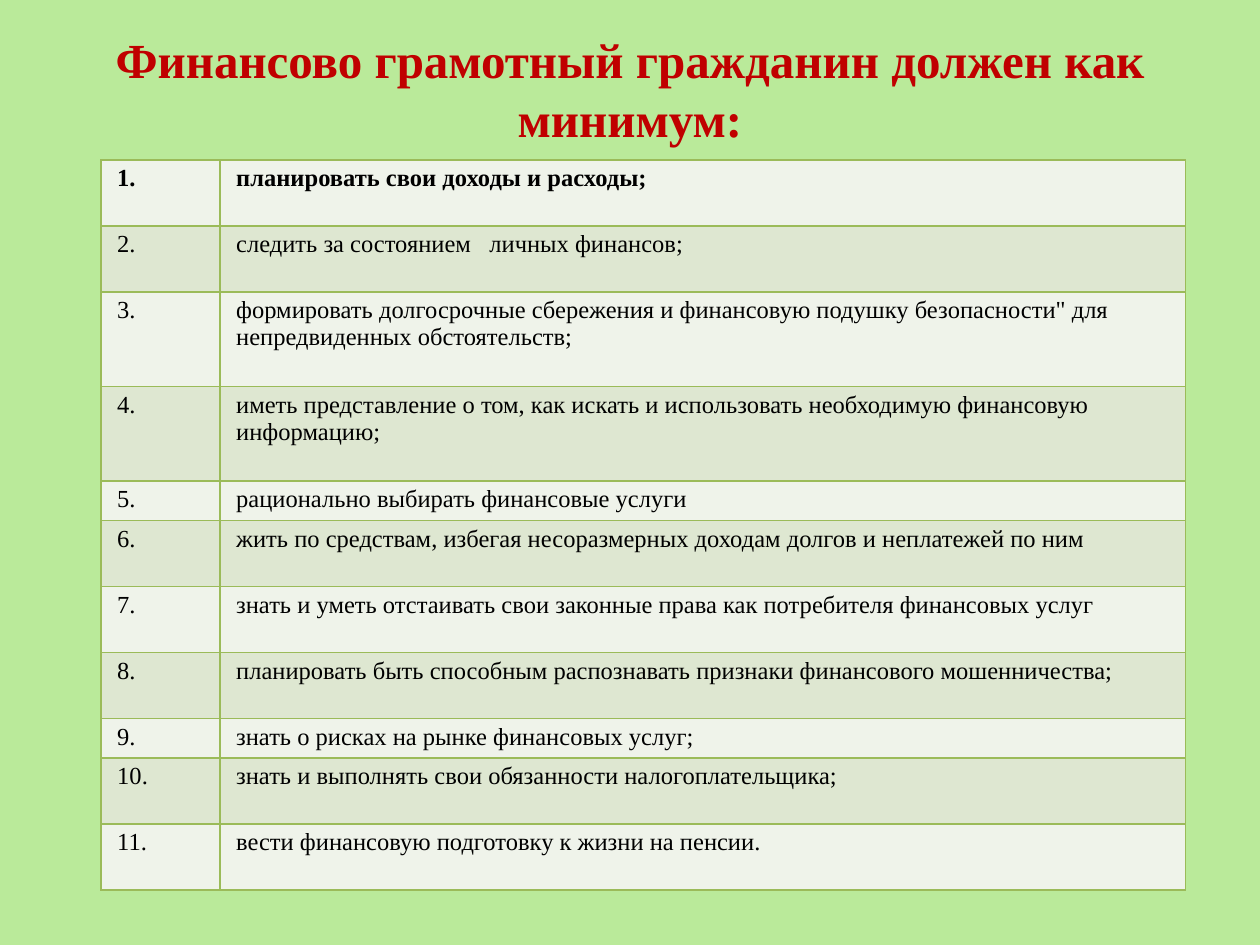
from dataclasses import dataclass

from lxml.etree import SubElement
from pptx import Presentation
from pptx.dml.color import RGBColor as Color
from pptx.enum.text import MSO_ANCHOR as Anchor, PP_ALIGN as Align
from pptx.oxml.ns import qn
from pptx.util import Pt


@dataclass(frozen=True)
class Theme:
    font: str = "Times New Roman"
    background: str = "BAEA9A"
    title: str = "C00000"
    text: str = "000000"
    border: str = "9BBB59"
    bands: tuple = ("EFF3EA", "DEE7D1")
    title_size: int = 28
    body_size: int = 14


THEME = Theme()
TITLE = "Финансово грамотный гражданин должен как минимум:"
SHORT, MEDIUM, TALL = 21.9, 37.75, 54
COLUMNS = (68, 552)
SKILLS = (
    ("планировать свои доходы и расходы;", MEDIUM),
    ("следить за состоянием   личных финансов;", MEDIUM),
    ('формировать долгосрочные сбережения и финансовую подушку безопасности" для непредвиденных обстоятельств;', TALL),
    ("иметь представление о том, как искать и использовать необходимую финансовую информацию;", TALL),
    ("рационально выбирать финансовые услуги", SHORT),
    ("жить по средствам, избегая несоразмерных доходам долгов и неплатежей по ним", MEDIUM),
    ("знать и уметь отстаивать свои законные права как потребителя финансовых услуг", MEDIUM),
    ("планировать быть способным распознавать признаки финансового мошенничества;", MEDIUM),
    ("знать о рисках на рынке финансовых услуг;", SHORT),
    ("знать и выполнять свои обязанности налогоплательщика;", MEDIUM),
    ("вести финансовую подготовку к жизни на пенсии.", MEDIUM),
)


def add_span(para, text, size, color, bold):
    span = para.add_run()
    span.text = text
    span.font.name = THEME.font
    span.font.size = Pt(size)
    span.font.bold = bold
    span.font.color.rgb = Color.from_string(color)


def add_title(page):
    box = page.shapes.add_textbox(Pt(36), Pt(21.6), Pt(648), Pt(90))
    frame = box.text_frame
    frame.word_wrap = True
    frame.vertical_anchor = Anchor.MIDDLE
    frame.margin_bottom = Pt(36)
    para = frame.paragraphs[0]
    para.alignment = Align.CENTER
    add_span(para, TITLE, THEME.title_size, THEME.title, True)


def add_borders(cell):
    properties = cell._tc.get_or_add_tcPr()
    for side in ("lnL", "lnR", "lnT", "lnB"):
        line = SubElement(properties, qn(f"a:{side}"), w=str(Pt(1)))
        fill = SubElement(line, qn("a:solidFill"))
        SubElement(fill, qn("a:srgbClr"), val=THEME.border)


def fill_cell(cell, text, band, bold):
    add_borders(cell)
    cell.fill.solid()
    cell.fill.fore_color.rgb = Color.from_string(band)
    cell.margin_left = cell.margin_right = Pt(9.4)
    cell.margin_top = cell.margin_bottom = Pt(2.88)
    add_span(cell.text_frame.paragraphs[0], text, THEME.body_size, THEME.text, bold)


def add_skills(page):
    height = sum(row_height for _, row_height in SKILLS)
    frame = page.shapes.add_table(
        len(SKILLS), len(COLUMNS), Pt(57.6), Pt(91.4), Pt(sum(COLUMNS)), Pt(height)
    )
    table = frame.table
    for column, width in zip(table.columns, COLUMNS):
        column.width = Pt(width)
    for index, (skill, row_height) in enumerate(SKILLS):
        row = table.rows[index]
        row.height = Pt(row_height)
        band = THEME.bands[index % 2]
        for cell, text in zip(row.cells, (f"{index + 1}.", skill)):
            fill_cell(cell, text, band, index == 0)


def main():
    deck = Presentation()
    deck.slide_width, deck.slide_height = Pt(720), Pt(540)
    page = deck.slides.add_slide(deck.slide_layouts[6])
    page.background.fill.solid()
    page.background.fill.fore_color.rgb = Color.from_string(THEME.background)
    add_title(page)
    add_skills(page)
    deck.save("out.pptx")


if __name__ == "__main__":
    main()
